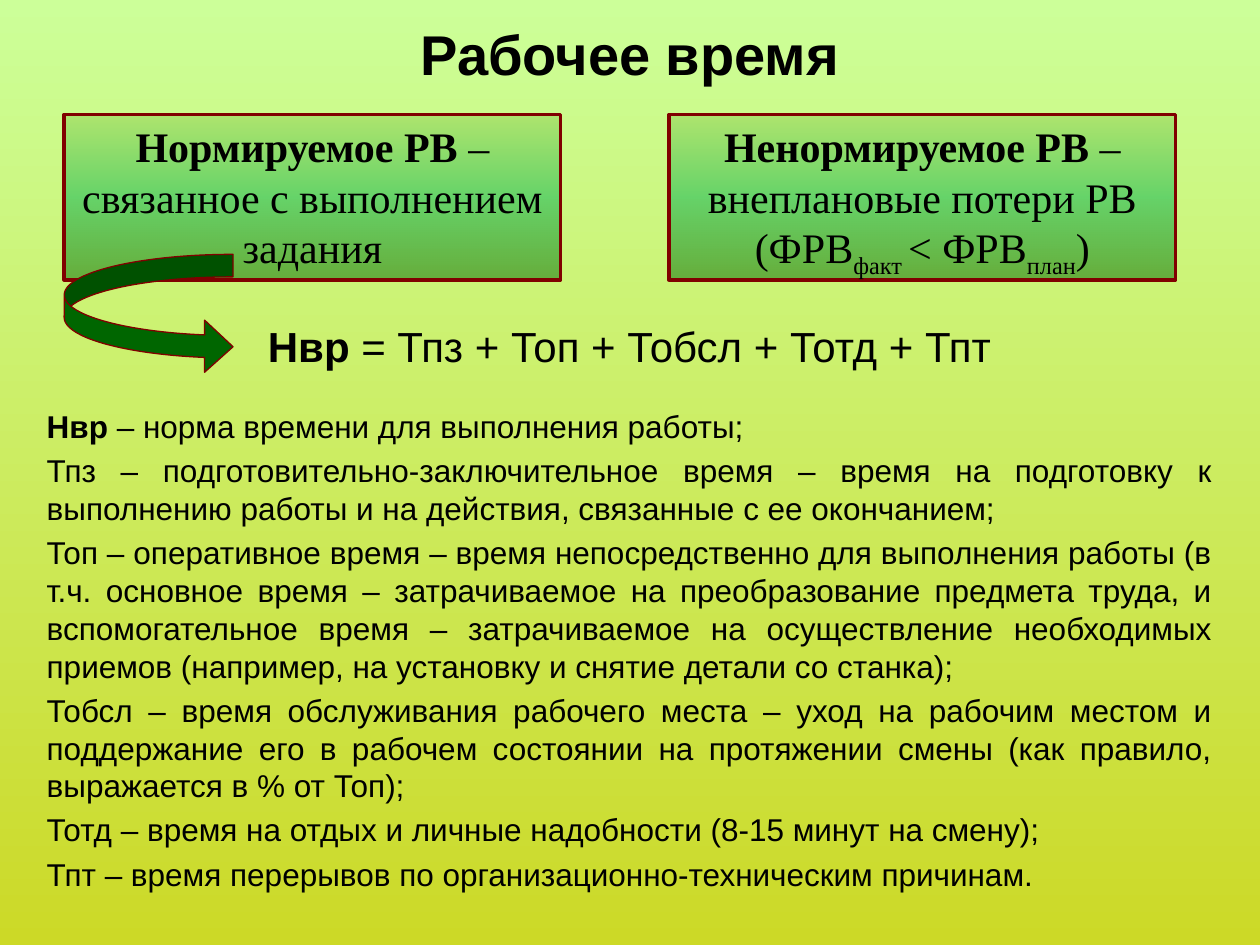
import pptx
import pptx.util
import pptx.dml.color
import pptx.enum.shapes
import pptx.enum.text
import pptx.oxml
import pptx.oxml.ns
from lxml import etree

Pt = pptx.util.Pt
qn = pptx.oxml.ns.qn
ALIGN = pptx.enum.text.PP_ALIGN
ANCHOR = pptx.enum.text.MSO_ANCHOR
SHAPE = pptx.enum.shapes.MSO_SHAPE


def color(value):
    """Turn a hex string into a colour."""
    return pptx.dml.color.RGBColor.from_string(value)


def place(sp, box):
    """Move and size a shape to a box in points."""
    sp.left, sp.top, sp.width, sp.height = [Pt(v) for v in box]


def set_gradient(fill, element, stops, alpha=100):
    """Give a fill a top-down gradient of (position, colour) stops."""
    fill.gradient()
    fill.gradient_angle = 270
    gs_list = element.find(".//" + qn("a:gsLst"))
    for gs in list(gs_list):
        gs_list.remove(gs)
    for position, value in stops:
        gs = etree.SubElement(gs_list, qn("a:gs"), pos=str(position * 1000))
        clr = etree.SubElement(gs, qn("a:srgbClr"), val=value)
        if alpha < 100:
            etree.SubElement(clr, qn("a:alpha"), val=str(alpha * 1000))


def add_runs(p, runs, size, font="Arial"):
    """Add (text, style) runs, where style is bold, sub or empty."""
    for text, style in runs:
        r = p.add_run()
        r.text = text
        r.font.size = Pt(size)
        r.font.name = font
        r.font.bold = style == "bold"
        r.font.color.rgb = color("000000")
        if style == "sub":
            r.font._element.set("baseline", "-25000")


def add_title(s, box, text):
    """Fill the title placeholder."""
    sp = s.shapes.title
    place(sp, box)
    tf = sp.text_frame
    tf.vertical_anchor = ANCHOR.MIDDLE
    tf.paragraphs[0].alignment = ALIGN.CENTER
    add_runs(tf.paragraphs[0], [(text, "bold")], 32)


def add_body(s, box, formula, terms):
    """Fill the body placeholder with the formula and its terms."""
    sp = s.placeholders[1]
    place(sp, box)
    tf = sp.text_frame
    tf.word_wrap = True
    tf.auto_size = pptx.enum.text.MSO_AUTO_SIZE.NONE
    for i, runs in enumerate([formula] + terms):
        p = tf.paragraphs[0] if i == 0 else tf.add_paragraph()
        p.alignment = ALIGN.JUSTIFY if i else ALIGN.CENTER
        p.space_before = Pt({0: 4.8, 1: 21}.get(i, 3.6))
        pPr = p._p.get_or_add_pPr()
        pPr.set("marL", "0")
        pPr.set("indent", "0")
        etree.SubElement(pPr, qn("a:buNone"))
        add_runs(p, runs, 18 if i else 24)


def add_card(s, box, runs):
    """Draw one framed kind of working time."""
    sp = s.shapes.add_shape(SHAPE.RECTANGLE, *[Pt(v) for v in box])
    sp.shadow.inherit = False
    stops = [(0, "92D050"), (50, "00B050"), (100, "006600")]
    set_gradient(sp.fill, sp.element, stops, alpha=50)
    sp.line.color.rgb = color("800000")
    sp.line.width = Pt(2)
    tf = sp.text_frame
    tf.word_wrap = True
    tf.vertical_anchor = ANCHOR.TOP
    tf.paragraphs[0].alignment = ALIGN.CENTER
    add_runs(tf.paragraphs[0], runs, 24, "Times New Roman")


def add_arrow(s, box):
    """Draw the curved arrow from the card to the formula."""
    sp = s.shapes.add_shape(SHAPE.CURVED_RIGHT_ARROW, *[Pt(v) for v in box])
    sp.shadow.inherit = False
    for i, value in enumerate([0.19, 0.44, 0.24]):
        sp.adjustments[i] = value
    sp.fill.solid()
    sp.fill.fore_color.rgb = color("006600")
    sp.line.color.rgb = color("800000")
    sp.line.width = Pt(0.75)


def main():
    """Build the slide and save it."""
    prs = pptx.Presentation()
    prs.slide_width, prs.slide_height = Pt(720), Pt(540)
    s = prs.slides.add_slide(prs.slide_layouts[1])
    set_gradient(s.background.fill, s.element, [(0, "CCFF99"), (100, "CCD927")])
    add_title(s, (36, 0, 648, 60.5), "Рабочее время")
    formula = [("Нвр", "bold"), (" = Тпз + Топ + Тобсл + Тотд + Тпт", "")]
    terms = [
        [("Нвр", "bold"), (" – норма времени для выполнения работы;", "")],
        [("Тпз – подготовительно-заключительное время – время на подготовку к "
          "выполнению работы и на действия, связанные с ее окончанием;", "")],
        [("Топ – оперативное время – время непосредственно для выполнения работы "
          "(в т.ч. основное время – затрачиваемое на преобразование предмета труда, "
          "и вспомогательное время – затрачиваемое на осуществление необходимых "
          "приемов (например, на установку и снятие детали со станка);", "")],
        [("Тобсл – время обслуживания рабочего места – уход на рабочим местом и "
          "поддержание его в рабочем состоянии на протяжении смены (как правило, "
          "выражается в % от Топ);", "")],
        [("Тотд – время на отдых и личные надобности (8-15 минут на смену);", "")],
        [("Тпт – время перерывов по организационно-техническим причинам.", "")],
    ]
    add_body(s, (19.5, 179.3, 680.4, 360.7), formula, terms)
    add_card(s, (36.7, 65.5, 283.7, 94.5),
             [("Нормируемое РВ ", "bold"), ("– связанное с выполнением задания", "")])
    add_card(s, (382.3, 65.5, 289.5, 94.5),
             [("Ненормируемое РВ", "bold"), (" –внеплановые потери РВ (ФРВ", ""),
              ("факт ", "sub"), ("< ФРВ", ""), ("план", "sub"), (")", "")])
    add_arrow(s, (36.7, 145.4, 96.5, 67.7))
    prs.save("out.pptx")


if __name__ == "__main__":
    main()
